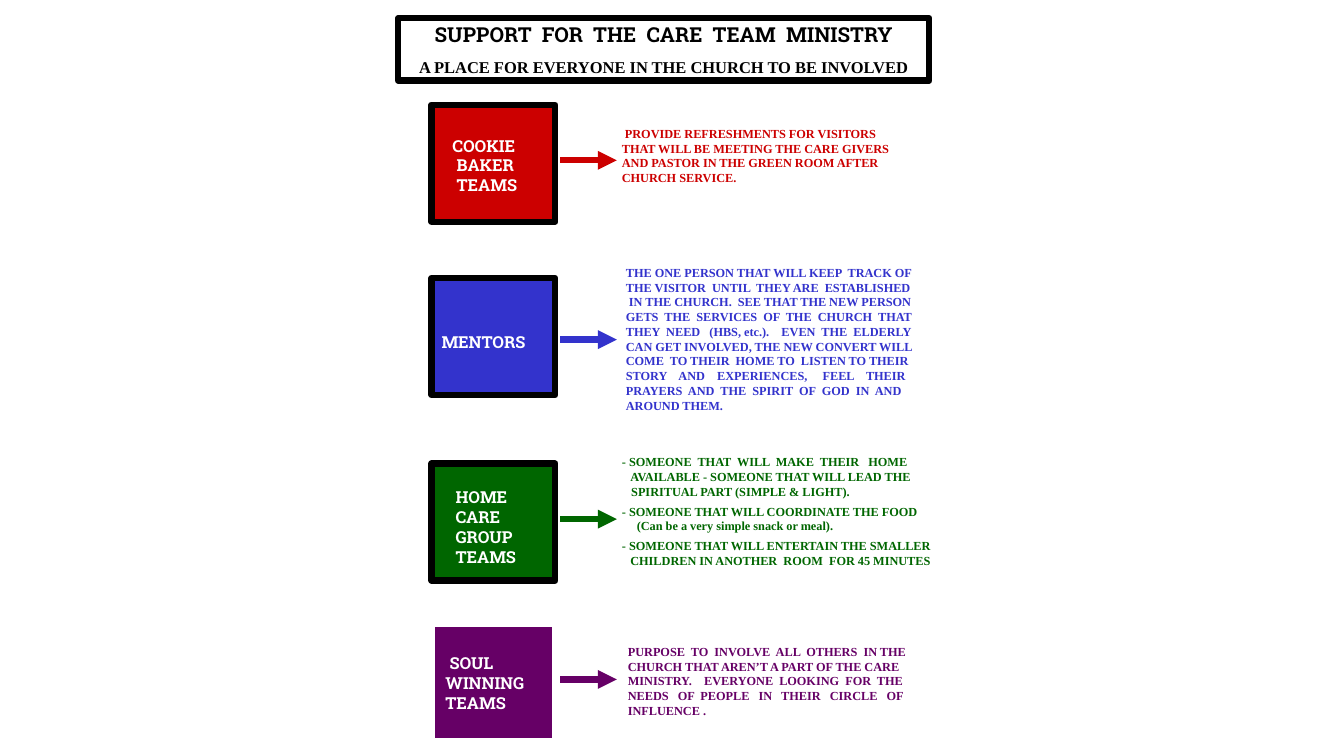
from dataclasses import dataclass

from lxml import etree
from pptx import Presentation
from pptx.dml.color import RGBColor
from pptx.enum.shapes import MSO_CONNECTOR, MSO_SHAPE
from pptx.enum.text import MSO_ANCHOR, PP_ALIGN
from pptx.oxml.ns import qn
from pptx.util import Pt

RECTANGLE = MSO_SHAPE.RECTANGLE
STRAIGHT = MSO_CONNECTOR.STRAIGHT
TOP = MSO_ANCHOR.TOP
LEFT, CENTER = PP_ALIGN.LEFT, PP_ALIGN.CENTER

SLAB, SERIF = "Roboto Slab", "Times New Roman"
BLACK, WHITE = "000000", "FFFFFF"
LABEL_SIZE, DETAIL_SIZE = 11.8, 8.8
BORDER = 4.5
BOX_LEFT, BOX_WIDTH, BOX_HEIGHT = 308.2, 88.5, 83.5
ARROW_START, ARROW_END = 400.3, 440.6


@dataclass
class Line:
    """One paragraph, with its indents and the space above it in points."""
    text: str
    indent: float = 0
    first: float = 0
    before: float = 0


@dataclass
class Team:
    color: str
    border: str
    box_top: float
    arrow_y: float
    label_area: tuple
    label: list
    detail_area: tuple
    detail: list


def item(text, before=0):
    """A dash item whose wrapped lines hang after the dash."""
    return Line(text, 10.4, -6, before)


TEAMS = [
    Team("CC0000", BLACK, 74.9, 114.5, (318.2, 94, 76, 48),
         [Line("COOKIE"), Line("BAKER", 3), Line("TEAMS", 3)],
         (439.2, 87.1, 226, 48),
         [Line("PROVIDE REFRESHMENTS FOR VISITORS", 2.2),
          Line("THAT WILL BE MEETING THE CARE GIVERS"),
          Line("AND PASTOR IN THE GREEN ROOM AFTER"),
          Line("CHURCH SERVICE.")]),
    Team("3333CC", BLACK, 198.7, 242.6, (310.4, 234, 84, 20),
         [Line("MENTORS")],
         (442.1, 186.5, 227.5, 112.3),
         [Line("THE ONE PERSON THAT WILL KEEP  TRACK OF THE VISITOR  UNTIL  "
               "THEY ARE  ESTABLISHED"),
          Line("IN THE CHURCH.  SEE THAT THE NEW PERSON GETS  THE  SERVICES  "
               "OF  THE  CHURCH  THAT THEY  NEED   (HBS, etc.).    EVEN  THE  "
               "ELDERLY CAN GET INVOLVED, THE NEW CONVERT WILL COME  TO THEIR  "
               "HOME TO  LISTEN TO THEIR STORY    AND    EXPERIENCES,     "
               "FEEL    THEIR PRAYERS  AND  THE  SPIRIT  OF  GOD  IN  AND "
               "AROUND THEM.", first=2.2)]),
    Team("006600", BLACK, 331.2, 370.8, (320.4, 345.2, 74, 62),
         [Line("HOME"), Line("CARE"), Line("GROUP"), Line("TEAMS")],
         (434.9, 321.7, 239, 98.8),
         [item("- SOMEONE  THAT  WILL  MAKE  THEIR   HOME"),
          Line("AVAILABLE - SOMEONE THAT WILL LEAD THE", 10.4),
          Line("SPIRITUAL PART (SIMPLE & LIGHT).", 11),
          item("- SOMEONE THAT WILL COORDINATE THE FOOD", 3.6),
          Line("(Can be a very simple snack or meal).", 15),
          item("- SOMEONE THAT WILL ENTERTAIN THE SMALLER CHILDREN IN "
               "ANOTHER  ROOM  FOR 45 MINUTES", 3.6)]),
    Team("660066", WHITE, 445.7, 485.3, (313.2, 463.7, 80, 48),
         [Line("SOUL", 3), Line("WINNING"), Line("TEAMS")],
         (443.5, 457.2, 216, 59),
         [Line("PURPOSE  TO  INVOLVE  ALL  OTHERS  IN THE"),
          Line("CHURCH THAT AREN’T A PART OF THE CARE"),
          Line("MINISTRY.    EVERYONE  LOOKING  FOR  THE"),
          Line("NEEDS   OF  PEOPLE   IN   THEIR   CIRCLE   OF"),
          Line("INFLUENCE .")]),
]


def rgb(color):
    return RGBColor.from_string(color)


def points(area):
    return [Pt(length) for length in area]


def add_box(slide, area, border, fill=None):
    shape = slide.shapes.add_shape(RECTANGLE, *points(area))
    shape.shadow.inherit = False
    if fill:
        shape.fill.solid()
        shape.fill.fore_color.rgb = rgb(fill)
    else:
        shape.fill.background()
    shape.line.color.rgb = rgb(border)
    shape.line.width = Pt(BORDER)
    return shape


def write_lines(shape, lines, font_name, size, color, align=LEFT):
    frame = shape.text_frame
    frame.word_wrap = True
    frame.vertical_anchor = TOP
    frame.margin_left = frame.margin_right = Pt(5)
    frame.margin_top = frame.margin_bottom = Pt(2.9)
    frame.text = "\n".join(line.text for line in lines)
    for paragraph, line in zip(frame.paragraphs, lines):
        paragraph.alignment = align
        paragraph.space_before = Pt(line.before)
        properties = paragraph._p.get_or_add_pPr()
        properties.set("marL", str(Pt(line.indent)))
        properties.set("indent", str(Pt(line.first)))
        for run in paragraph.runs:
            run.font.name = font_name
            run.font.size = Pt(size)
            run.font.bold = True
            run.font.color.rgb = rgb(color)


def add_text(slide, area, lines, font_name, size, color):
    text_box = slide.shapes.add_textbox(*points(area))
    write_lines(text_box, lines, font_name, size, color)


def add_arrow(slide, y, color):
    arrow = slide.shapes.add_connector(
        STRAIGHT, *points((ARROW_START, y, ARROW_END, y)))
    arrow.line.color.rgb = rgb(color)
    arrow.line.width = Pt(BORDER)
    etree.SubElement(arrow.line._get_or_add_ln(), qn("a:tailEnd"),
                     type="triangle")
    etree.SubElement(arrow._element.spPr, qn("a:effectLst"))


def add_title(slide):
    box = add_box(slide, (284.4, 13, 379.4, 44.6), BLACK)
    lines = [Line("SUPPORT  FOR  THE  CARE  TEAM  MINISTRY"),
             Line("A PLACE FOR EVERYONE IN THE CHURCH TO BE INVOLVED",
                  before=7)]
    write_lines(box, lines, SLAB, 14.7, BLACK, CENTER)
    subtitle = box.text_frame.paragraphs[1].runs[0]
    subtitle.font.name = SERIF
    subtitle.font.size = Pt(LABEL_SIZE)


def add_team(slide, team):
    add_box(slide, (BOX_LEFT, team.box_top, BOX_WIDTH, BOX_HEIGHT),
            team.border, team.color)
    add_text(slide, team.label_area, team.label, SLAB, LABEL_SIZE, WHITE)
    add_arrow(slide, team.arrow_y, team.color)
    add_text(slide, team.detail_area, team.detail, SERIF, DETAIL_SIZE,
             team.color)


def main():
    presentation = Presentation()
    presentation.slide_width = Pt(960)
    presentation.slide_height = Pt(540)
    slide = presentation.slides.add_slide(presentation.slide_layouts[6])
    add_title(slide)
    for team in TEAMS:
        add_team(slide, team)
    presentation.save("out.pptx")


if __name__ == "__main__":
    main()
